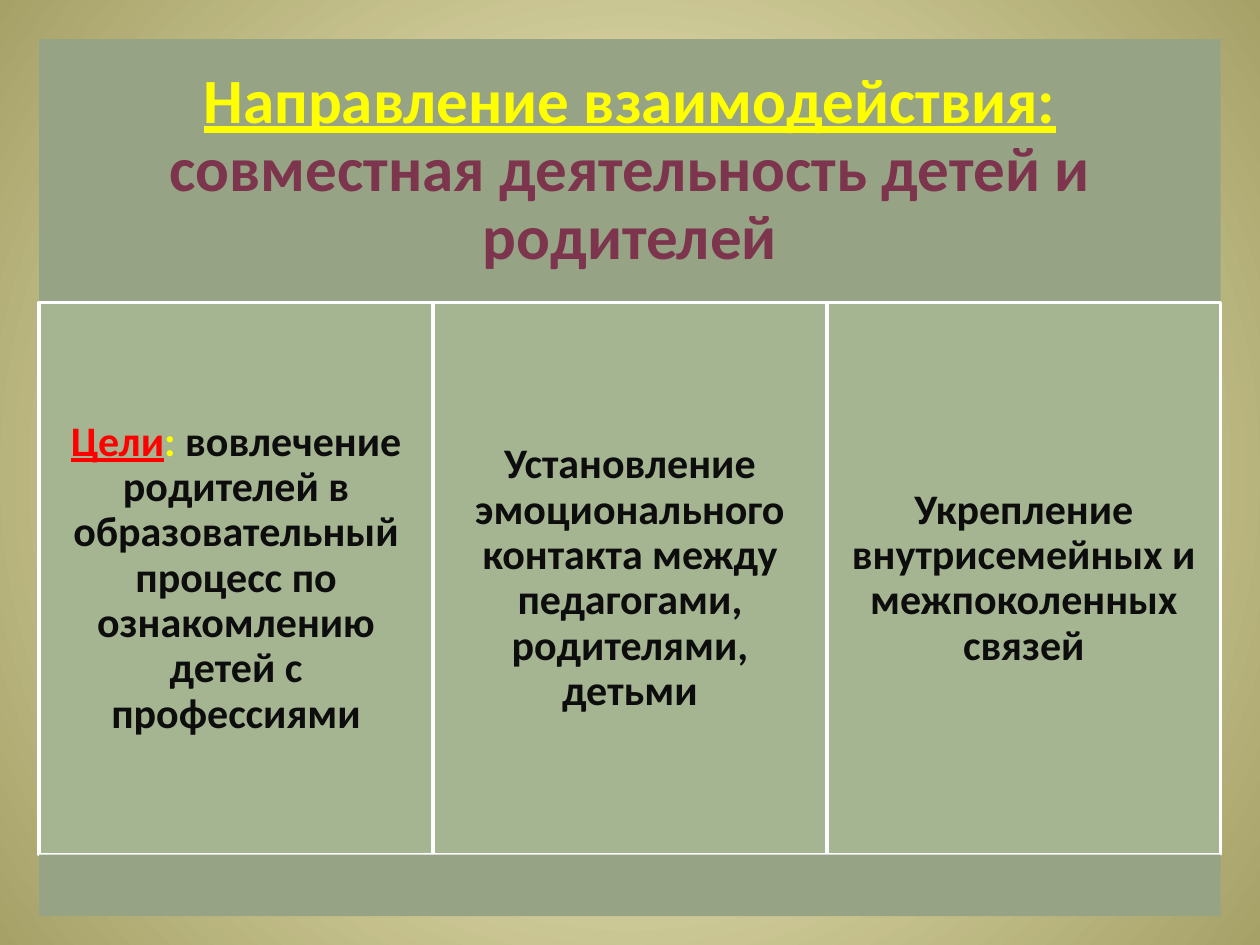
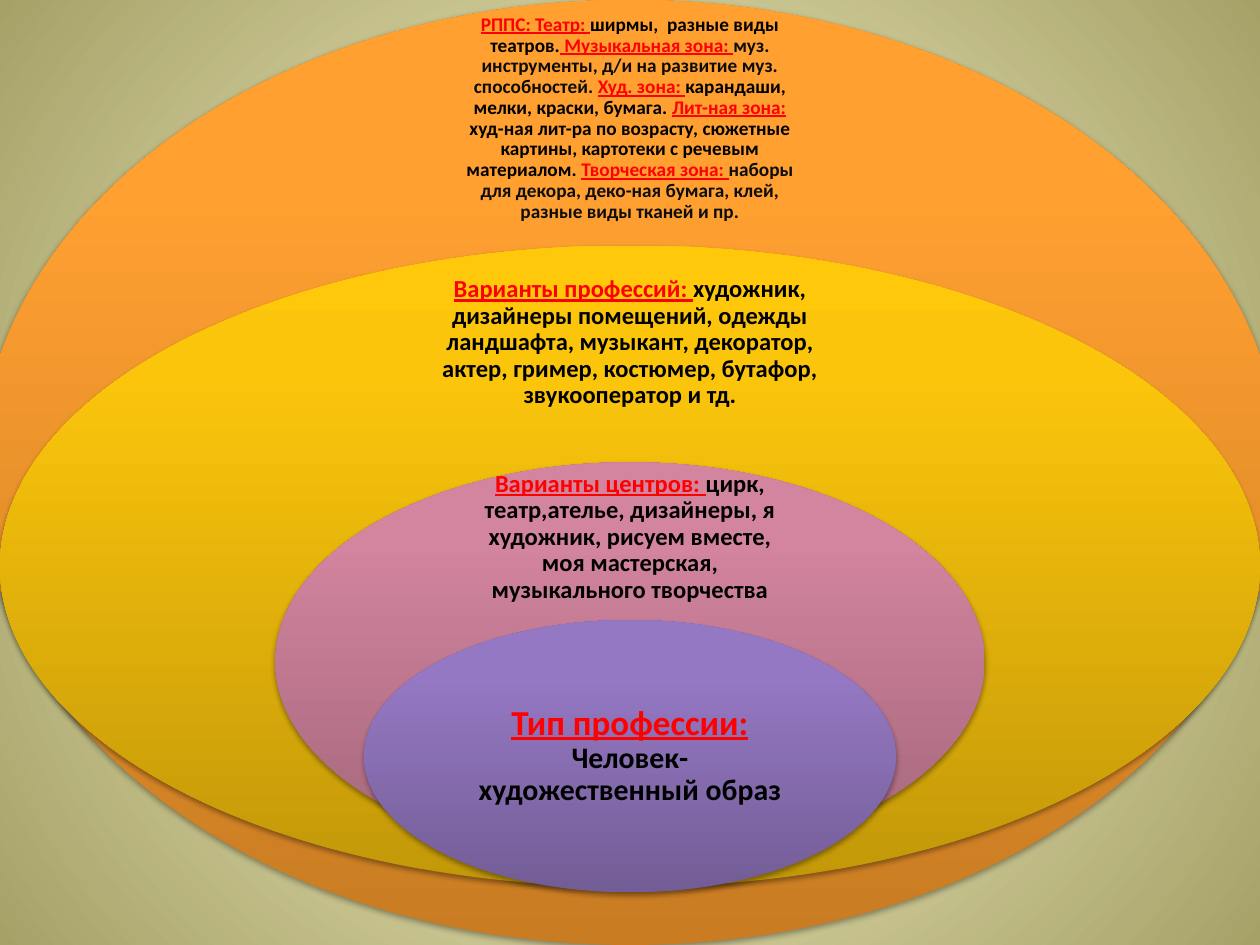
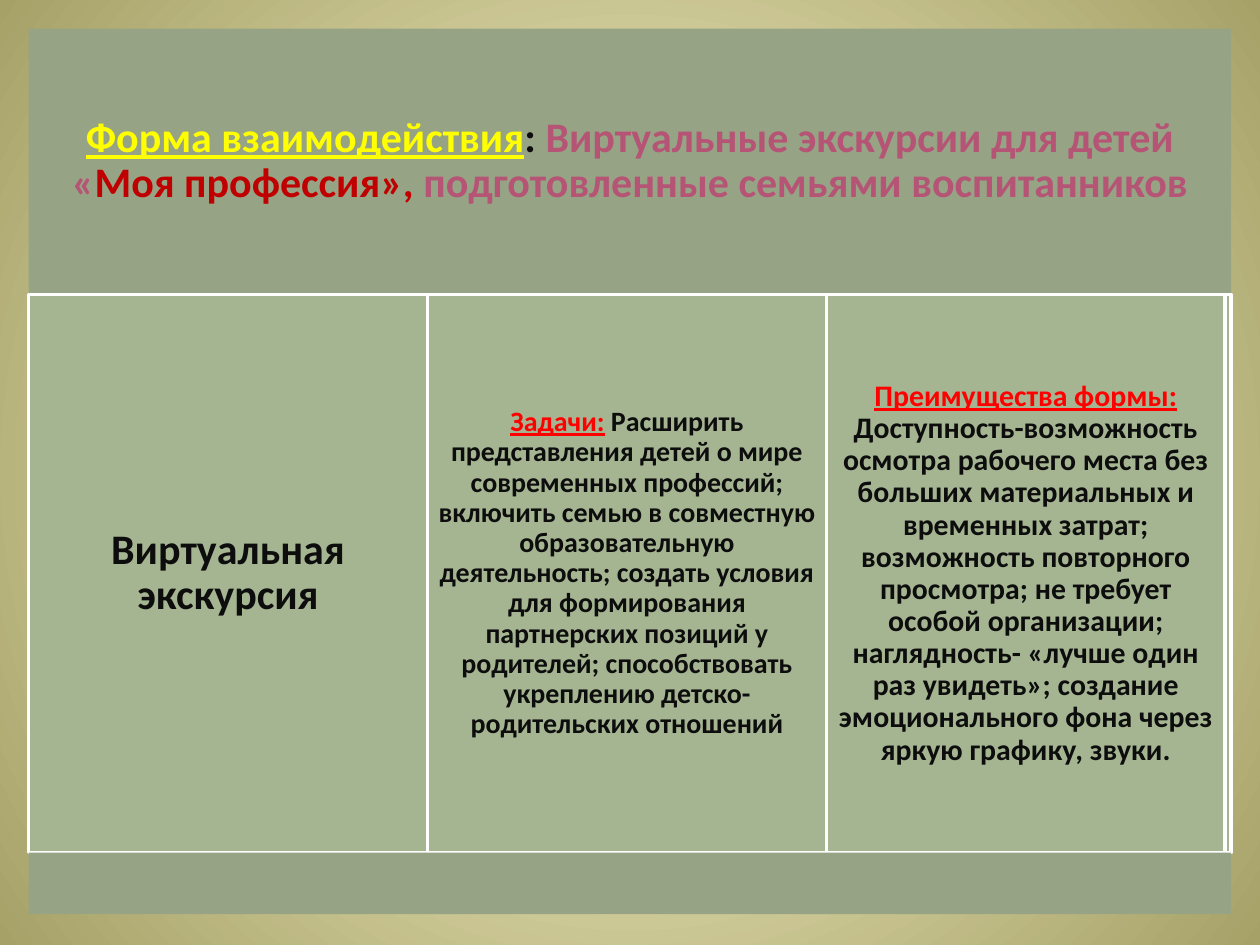
from dataclasses import dataclass

from lxml import etree
from pptx import Presentation
from pptx.dml.color import RGBColor
from pptx.enum.shapes import MSO_SHAPE as Preset
from pptx.enum.text import MSO_ANCHOR as Anchor, PP_ALIGN as Align
from pptx.oxml.ns import qn
from pptx.util import Cm, Pt

# Shared look
FONT = "Calibri"
SLIDE_W, SLIDE_H = 25.4, 19.05
BAND = RGBColor(0x96, 0xA4, 0x85)
PANEL = RGBColor(0xA5, 0xB5, 0x92)
WHITE = RGBColor(0xFF, 0xFF, 0xFF)
BLACK = RGBColor(0x00, 0x00, 0x00)
INK = RGBColor(0x0D, 0x0D, 0x0D)
RED = RGBColor(0xFF, 0x00, 0x00)
DARK_RED = RGBColor(0xC0, 0x00, 0x00)
YELLOW = RGBColor(0xFF, 0xFF, 0x00)
PLUM = RGBColor(0x7C, 0x35, 0x4D)
ROSE = RGBColor(0xB5, 0x54, 0x75)
BACK_CENTRE = RGBColor(0xFF, 0xFC, 0xD4)
BACK_EDGE = RGBColor(0xA6, 0xA1, 0x67)
ORANGE_SHADES = (RGBColor(0xC9, 0x7C, 0x22), RGBColor(0xFF, 0xA0, 0x31), RGBColor(0xFF, 0xA1, 0x33))
GOLD_SHADES = (RGBColor(0xC2, 0x98, 0x09), RGBColor(0xFB, 0xC5, 0x0C), RGBColor(0xFF, 0xC8, 0x0A))
PINK_SHADES = (RGBColor(0xA2, 0x66, 0x7A), RGBColor(0xD3, 0x84, 0x9F), RGBColor(0xD5, 0x84, 0x9F))
VIOLET_SHADES = (RGBColor(0x73, 0x5D, 0x96), RGBColor(0x95, 0x78, 0xC3), RGBColor(0x96, 0x77, 0xC5))


@dataclass(frozen=True)
class Span:
    text: str
    color: RGBColor = INK
    underline: bool = False
    size: float | None = None


@dataclass(frozen=True)
class Caption:
    size: float
    inset: float
    spans: tuple[Span, ...]


@dataclass(frozen=True)
class Box:
    left: float
    top: float
    width: float
    height: float

    def lengths(self) -> tuple[Cm, ...]:
        return Cm(self.left), Cm(self.top), Cm(self.width), Cm(self.height)


@dataclass(frozen=True)
class Board:
    """Title band over three equal panels and a foot band."""
    margin: float
    title_height: float
    panel_width: float
    panel_height: float
    title: Caption
    panels: tuple[Caption, ...]
    sliver: float = 0
    foot_height: float = 1.24


@dataclass(frozen=True)
class Ring:
    """Ellipse centred on the slide, with its caption."""
    oval: Box
    words: Box
    shades: tuple[RGBColor, ...]
    caption: Caption


def centred(top: float, width: float, height: float) -> Box:
    return Box((SLIDE_W - width) / 2, top, width, height)


def label(text: str, color: RGBColor = RED) -> Span:
    return Span(text, color, underline=True)


def add_child(parent, tag: str, **attributes):
    return etree.SubElement(parent, qn(tag), {k: str(v) for k, v in attributes.items()})


def paint_gradient(fill, owner, stops: dict[int, RGBColor], radial: bool = False) -> None:
    fill.gradient()
    gradient = owner.find(".//" + qn("a:gradFill"))
    for part in list(gradient):
        gradient.remove(part)
    stop_list = add_child(gradient, "a:gsLst")
    for percent, color in stops.items():
        stop = add_child(stop_list, "a:gs", pos=percent * 1000)
        add_child(stop, "a:srgbClr", val=color)
    if radial:
        path = add_child(gradient, "a:path", path="circle")
        add_child(path, "a:fillToRect", l=50000, t=50000, r=50000, b=50000)
    else:
        add_child(gradient, "a:lin", ang=270 * 60000, scaled=0)


def add_soft_shadow(shape) -> None:
    effects = shape._element.spPr.find(qn("a:effectLst"))
    shadow = add_child(effects, "a:outerShdw", blurRad=Pt(3.1), dist=Pt(1.8),
                       dir=90 * 60000, rotWithShape=0)
    color = add_child(shadow, "a:srgbClr", val=BLACK)
    add_child(color, "a:alpha", val=35000)


def write_caption(shape, caption: Caption) -> None:
    frame = shape.text_frame
    frame.word_wrap = True
    frame.vertical_anchor = Anchor.MIDDLE
    frame.margin_left = frame.margin_right = Cm(caption.inset)
    frame.margin_top = frame.margin_bottom = Cm(caption.inset)
    paragraph = frame.paragraphs[0]
    paragraph.alignment = Align.CENTER
    paragraph.line_spacing = 0.9
    for span in caption.spans:
        run = paragraph.add_run()
        run.text = span.text
        run.font.name = FONT
        run.font.size = Pt(span.size or caption.size)
        run.font.bold = True
        run.font.underline = span.underline
        run.font.color.rgb = span.color


def add_block(slide, box: Box, color: RGBColor, caption: Caption | None = None,
              outlined: bool = False) -> None:
    block = slide.shapes.add_shape(Preset.RECTANGLE, *box.lengths())
    block.shadow.inherit = False
    block.fill.solid()
    block.fill.fore_color.rgb = color
    if outlined:
        block.line.color.rgb = WHITE
        block.line.width = Pt(2)
    else:
        block.line.fill.background()
    if caption:
        write_caption(block, caption)


def add_board(slide, board: Board) -> None:
    left, width = board.margin, SLIDE_W - 2 * board.margin
    panel_top = board.margin + board.title_height
    add_block(slide, Box(left, board.margin, width, board.title_height), BAND, board.title)
    for caption in board.panels:
        panel = Box(left, panel_top, board.panel_width, board.panel_height)
        add_block(slide, panel, PANEL, caption, outlined=True)
        left += board.panel_width
    if board.sliver:
        add_block(slide, Box(left, panel_top, board.sliver, board.panel_height), PANEL, outlined=True)
    foot = Box(board.margin, panel_top + board.panel_height, width, board.foot_height)
    add_block(slide, foot, BAND)


def add_ring(slide, ring: Ring) -> None:
    oval = slide.shapes.add_shape(Preset.OVAL, *ring.oval.lengths())
    oval.shadow.inherit = False
    oval.line.fill.background()
    paint_gradient(oval.fill, oval._element.spPr, dict(zip((0, 80, 100), ring.shades)))
    add_soft_shadow(oval)
    write_caption(slide.shapes.add_textbox(*ring.words.lengths()), ring.caption)


def new_slide(deck):
    slide = deck.slides.add_slide(deck.slide_layouts[6])
    paint_gradient(slide.background.fill, slide._element,
                   {0: BACK_CENTRE, 100: BACK_EDGE}, radial=True)
    return slide


# Slide 1: direction and goals
GOALS = Board(
    margin=0.79, title_height=5.31, panel_width=7.94, panel_height=11.13,
    title=Caption(36, 0.38, (
        label("Направление взаимодействия: ", YELLOW),
        Span("совместная деятельность детей и родителей", PLUM))),
    panels=(
        Caption(24, 0.25, (
            label("Цели"),
            Span(": ", YELLOW),
            Span("вовлечение родителей в образовательный процесс по ознакомлению детей с профессиями"))),
        Caption(24, 0.25, (
            Span("Установление эмоционального контакта между педагогами, родителями, детьми"),)),
        Caption(24, 0.25, (Span("Укрепление внутрисемейных и межпоколенных связей"),)),
    ))

# Slide 2: nested rings, from the outside in
RINGS = (
    Ring(centred(0, 26.21, SLIDE_H), centred(0.97, 7.34, 2.84), ORANGE_SHADES, Caption(11, 0.23, (
        label("РППС: Театр: "),
        Span("ширмы,  разные виды театров.", BLACK),
        label(" Музыкальная зона: "),
        Span("муз. инструменты, д/и на развитие муз. способностей. "),
        label("Худ. зона: "),
        Span("карандаши, мелки, краски, бумага. ", BLACK),
        label("Лит-ная зона: "),
        Span("худ-ная лит-ра по возрасту, сюжетные картины, картотеки с речевым материалом. ", BLACK),
        label("Творческая зона: "),
        Span("наборы для декора, деко-ная бумага, клей, разные виды тканей и пр.")))),
    Ring(centred(4.95, 25.4, 12.93), centred(5.74, 8.89, 2.34), GOLD_SHADES, Caption(14, 0.28, (
        label("Варианты профессий: "),
        Span("художник, дизайнеры помещений, одежды ландшафта, музыкант, декоратор, "
             "актер, гример, костюмер, бутафор, звукооператор и тд.", BLACK)))),
    Ring(centred(9.32, 14.3, 8.03), centred(9.93, 6.65, 1.8), PINK_SHADES, Caption(14, 0.28, (
        label("Варианты центров: "),
        Span("цирк, театр,ателье, дизайнеры, я художник, рисуем вместе, "
             "моя мастерская, музыкального творчества", BLACK)))),
    Ring(centred(12.5, 10.72, 5.49), centred(13.87, 7.57, 2.74), VIOLET_SHADES, Caption(20, 0.41, (
        label("Тип профессии: "),
        Span("Человек-художественный образ", BLACK, size=17)))),
)

# Slide 3: virtual excursions
EXCURSIONS = Board(
    margin=0.58, title_height=5.36, panel_width=8.04, panel_height=11.25, sliver=0.12,
    title=Caption(24, 0.25, (
        label("Форма взаимодействия", YELLOW),
        Span(": "),
        Span("Виртуальные экскурсии для детей «", ROSE),
        Span("Моя профессия», ", DARK_RED),
        Span("подготовленные семьями воспитанников", ROSE))),
    panels=(
        Caption(24, 0.25, (Span("Виртуальная экскурсия"),)),
        Caption(16, 0.18, (
            label("Задачи:"),
            Span(" Расширить представления детей о мире современных профессий; включить семью "
                 "в совместную образовательную деятельность; создать условия для формирования "
                 "партнерских позиций у родителей; способствовать укреплению "
                 "детско-родительских отношений"))),
        Caption(17, 0.18, (
            label("Преимущества формы: "),
            Span("Доступность-возможность осмотра рабочего места без больших материальных и "
                 "временных затрат; возможность повторного просмотра; не требует особой "
                 "организации; наглядность- «лучше один раз увидеть»; создание эмоционального "
                 "фона через яркую графику, звуки."))),
    ))


def main() -> None:
    deck = Presentation()
    deck.slide_width, deck.slide_height = Cm(SLIDE_W), Cm(SLIDE_H)
    add_board(new_slide(deck), GOALS)
    rings_slide = new_slide(deck)
    for ring in RINGS:
        add_ring(rings_slide, ring)
    add_board(new_slide(deck), EXCURSIONS)
    deck.save("out.pptx")


if __name__ == "__main__":
    main()
